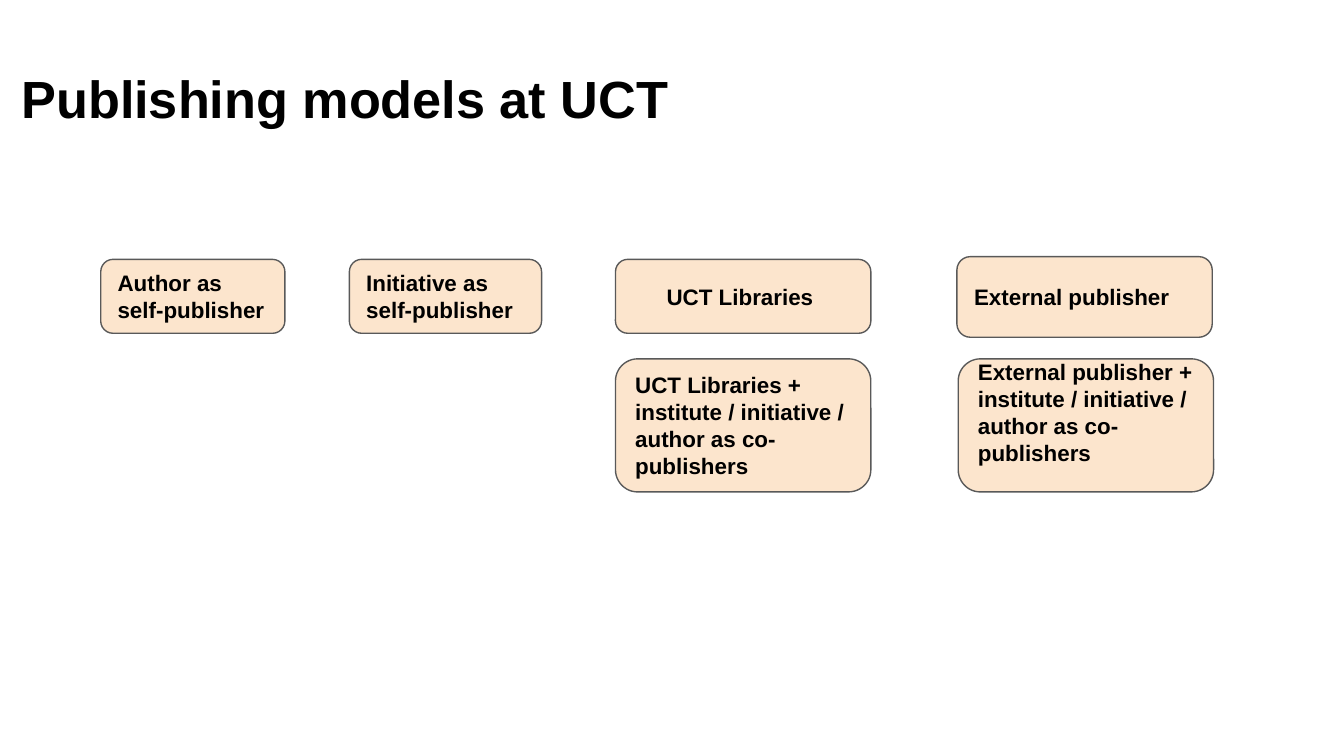
from pptx import Presentation
from pptx.dml.color import RGBColor
from pptx.enum.shapes import MSO_SHAPE
from pptx.enum.text import MSO_ANCHOR, PP_ALIGN
from pptx.util import Inches, Pt

TITLE = "Publishing models at UCT"
LEFT, CENTER = PP_ALIGN.LEFT, PP_ALIGN.CENTER
INSET = 0.1
RAISED = 0.3

MODELS = [
    ("Author as self-publisher", (0.75, 1.93, 1.37, 0.55), LEFT, INSET),
    ("Initiative as self-publisher", (2.6, 1.93, 1.43, 0.55), LEFT, INSET),
    ("UCT Libraries ", (4.58, 1.93, 1.9, 0.55), CENTER, INSET),
    ("External publisher", (7.12, 1.91, 1.9, 0.6), LEFT, INSET),
    ("UCT Libraries + institute / initiative / author as co-publishers",
     (4.58, 2.67, 1.9, 0.99), LEFT, INSET),
    ("External publisher + institute / initiative / author as co-publishers",
     (7.13, 2.67, 1.9, 0.99), LEFT, RAISED),
]


def color(value):
    return RGBColor.from_string(value)


def write_text(shape, text, size, alignment, margins):
    frame = shape.text_frame
    frame.word_wrap = True
    frame.vertical_anchor = MSO_ANCHOR.MIDDLE
    (frame.margin_left, frame.margin_top,
     frame.margin_right, frame.margin_bottom) = map(Inches, margins)
    paragraph = frame.paragraphs[0]
    paragraph.text = text
    paragraph.alignment = alignment
    paragraph.font.name = "Arial"
    paragraph.font.size = Pt(size)
    paragraph.font.bold = True
    paragraph.font.color.rgb = color("000000")
    return paragraph


def add_model(slide, text, box, alignment, bottom_margin):
    shape = slide.shapes.add_shape(
        MSO_SHAPE.FLOWCHART_ALTERNATE_PROCESS, *map(Inches, box))
    shape.shadow.inherit = False
    shape.fill.solid()
    shape.fill.fore_color.rgb = color("FCE5CD")
    shape.line.color.rgb = color("595959")
    shape.line.width = Pt(0.75)
    write_text(shape, text, 12, alignment,
               (INSET, INSET, INSET, bottom_margin))


def main():
    presentation = Presentation()
    presentation.slide_width = Inches(10)
    presentation.slide_height = Inches(10 * 9 / 16)
    slide = presentation.slides.add_slide(presentation.slide_layouts[6])
    title = slide.shapes.add_textbox(*map(Inches, (0.09, 0.21, 8.62, 1.09)))
    heading = write_text(title, TITLE, 28, LEFT, (0.07, 0.04, 0.07, 0.04))
    heading.line_spacing = 0.9
    for model in MODELS:
        add_model(slide, *model)
    presentation.save("out.pptx")


if __name__ == "__main__":
    main()
